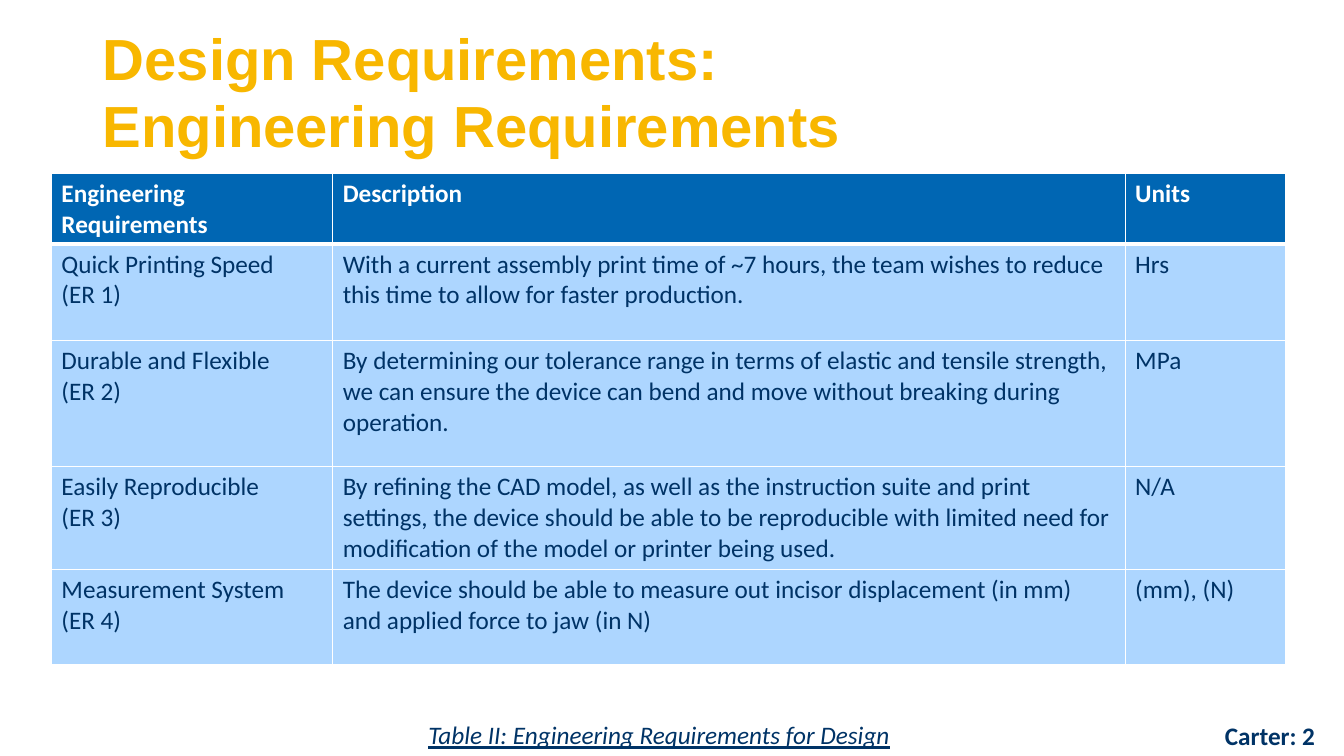
import pptx
import pptx.dml.color
import pptx.enum.text
import pptx.oxml
import pptx.oxml.ns
import pptx.util
from dataclasses import dataclass

Inches = pptx.util.Inches
Pt = pptx.util.Pt


@dataclass(frozen=True)
class Theme:
    gold: str = "F8B700"
    blue: str = "0066B3"
    pale: str = "ADD6FF"
    navy: str = "003366"
    white: str = "FFFFFF"
    heading_font: str = "Arial"
    body_font: str = "Calibri"
    title_size: float = 41.4
    body_size: float = 18


theme = Theme()


def style(tf, color, name=theme.body_font, size=theme.body_size,
          bold=False, italic=False, underline=False):
    """Format every run in a text frame."""
    tf.word_wrap = True
    for p in tf.paragraphs:
        for r in p.runs:
            r.font.name = name
            r.font.size = Pt(size)
            r.font.bold = bold
            r.font.italic = italic
            r.font.underline = underline
            r.font.color.rgb = pptx.dml.color.RGBColor.from_string(color)


def add_border(cell, side, width):
    ns = pptx.oxml.ns.nsdecls("a")
    cell._tc.get_or_add_tcPr().append(pptx.oxml.parse_xml(
        f'<a:ln{side} {ns} w="{Pt(width)}"><a:solidFill>'
        f'<a:srgbClr val="{theme.white}"/></a:solidFill></a:ln{side}>'))


prs = pptx.Presentation()
prs.slide_width = Inches(13.33)
prs.slide_height = Inches(7.5)
s = prs.slides.add_slide(prs.slide_layouts[6])

# Title
title = s.shapes.add_textbox(Inches(0.92), Inches(0.4), Inches(11.5), Inches(1.07))
tf = title.text_frame
tf.text = "Design Requirements:\vEngineering Requirements"
tf.vertical_anchor = pptx.enum.text.MSO_ANCHOR.MIDDLE
tf.paragraphs[0].line_spacing = 0.96
style(tf, theme.gold, theme.heading_font, theme.title_size, bold=True)

# Requirements table
col_widths = [2.79, 7.86, 1.59]
row_heights = [0.69, 0.96, 1.25, 1.02, 0.94]
rows = [
    ("Engineering Requirements", "Description", "Units"),
    ("Quick Printing Speed\n(ER 1)",
     "With a current assembly print time of ~7 hours, the team wishes to reduce "
     "this time to allow for faster production.", "Hrs"),
    ("Durable and Flexible\n(ER 2)",
     "By determining our tolerance range in terms of elastic and tensile strength, "
     "we can ensure the device can bend and move without breaking during operation.",
     "MPa"),
    ("Easily Reproducible\n(ER 3)",
     "By refining the CAD model, as well as the instruction suite and print settings, "
     "the device should be able to be reproducible with limited need for modification "
     "of the model or printer being used.", "N/A"),
    ("Measurement System\n(ER 4)",
     "The device should be able to measure out incisor displacement (in mm) "
     "and applied force to jaw (in N)", "(mm), (N)"),
]
table = s.shapes.add_table(len(rows), len(col_widths), Inches(0.51), Inches(1.72),
                           Inches(sum(col_widths)), Inches(sum(row_heights))).table
for col, width in zip(table.columns, col_widths):
    col.width = Inches(width)
for row, height in zip(table.rows, row_heights):
    row.height = Inches(height)

for i, texts in enumerate(rows):
    header = i == 0
    for j, text in enumerate(texts):
        cell = table.cell(i, j)
        cell.text_frame.text = text
        style(cell.text_frame, theme.white if header else theme.navy, bold=header)
        widths = {"L": 1, "R": 1, "T": 3 if i == 1 else 1, "B": 3 if header else 1}
        for side, width in widths.items():
            add_border(cell, side, width)
        cell.fill.solid()
        cell.fill.fore_color.rgb = pptx.dml.color.RGBColor.from_string(
            theme.blue if header else theme.pale)

# Caption and page label
footers = [
    ("Table II: Engineering Requirements for Design", 4.15, 7.09, 5.03,
     {"italic": True, "underline": True}),
    ("Carter: 2", 12.05, 7.1, 1.28, {"bold": True}),
]
for text, left, top, width, emphasis in footers:
    box = s.shapes.add_textbox(Inches(left), Inches(top), Inches(width), Inches(0.4))
    box.text_frame.text = text
    style(box.text_frame, theme.navy, **emphasis)

prs.save("out.pptx")
